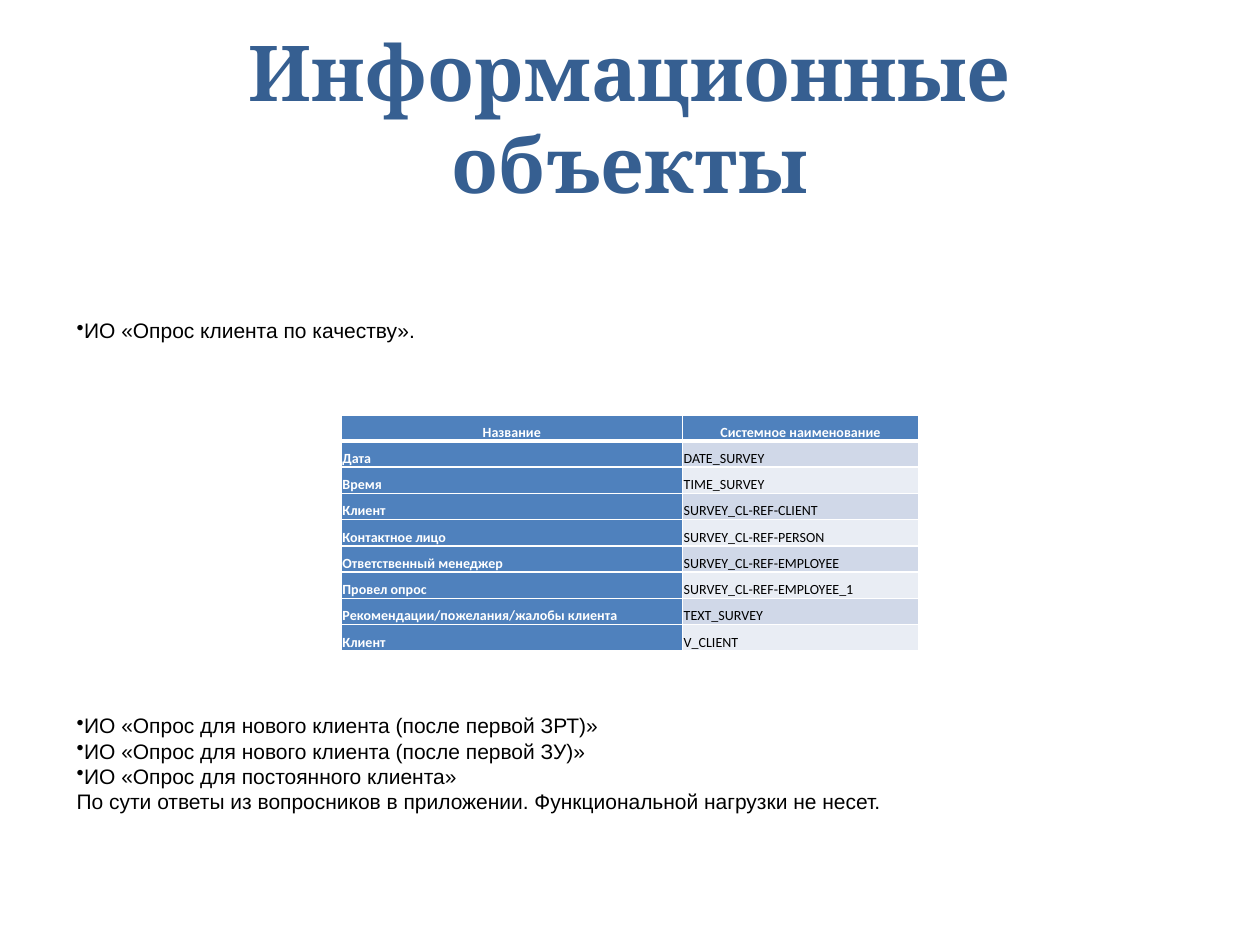
import pptx
import pptx.dml.color
import pptx.enum.text
import pptx.oxml
import pptx.oxml.ns
import pptx.util
from lxml import etree

Pt = pptx.util.Pt
ALIGN = pptx.enum.text.PP_ALIGN
ANCHOR = pptx.enum.text.MSO_ANCHOR

TITLE = "Информационные объекты"
# text, has bullet, space before
NOTES = [
    ("ИО «Опрос клиента по качеству».", True, 0),
    ("ИО «Опрос для нового клиента (после первой ЗРТ)»", True, 211.5),
    ("ИО «Опрос для нового клиента (после первой ЗУ)»", True, 0),
    ("ИО «Опрос для постоянного клиента»", True, 0),
    ("По сути ответы из вопросников в приложении. Функциональной нагрузки не несет.", False, 0),
]
FIELDS = [
    ("Название", "Системное наименование"),
    ("Дата", "DATE_SURVEY"),
    ("Время", "TIME_SURVEY"),
    ("Клиент", "SURVEY_CL-REF-CLIENT"),
    ("Контактное лицо", "SURVEY_CL-REF-PERSON"),
    ("Ответственный менеджер", "SURVEY_CL-REF-EMPLOYEE"),
    ("Провел опрос", "SURVEY_CL-REF-EMPLOYEE_1"),
    ("Рекомендации/пожелания/жалобы клиента", "TEXT_SURVEY"),
    ("Клиент", "V_CLIENT"),
]
COLUMN_WIDTHS = [195, 135]
ROW_HEIGHT = 15
WHITE, BLACK, BLUE, TITLE_BLUE = "FFFFFF", "000000", "4F81BD", "365F91"
BANDS = ["E9EDF4", "D0D8E8"]


def color(value):
    return pptx.dml.color.RGBColor.from_string(value)


def format_runs(paragraph, name, size, value, bold=False):
    for run in paragraph.runs:
        run.font.name = name
        run.font.size = Pt(size)
        run.font.bold = bold
        run.font.color.rgb = color(value)


def add_text_frame(slide, left, top, width, height):
    text_frame = slide.shapes.add_textbox(Pt(left), Pt(top), Pt(width), Pt(height)).text_frame
    text_frame.word_wrap = True
    text_frame.vertical_anchor = ANCHOR.MIDDLE
    return text_frame


def set_borders(cell, bottom_width):
    """Give the cell white edges, 1 pt wide except at the bottom."""
    properties = cell._tc.get_or_add_tcPr()
    widths = {"lnL": 1, "lnR": 1, "lnT": 1, "lnB": bottom_width}
    for index, (tag, width) in enumerate(widths.items()):
        line = pptx.oxml.parse_xml(
            f'<a:{tag} {pptx.oxml.ns.nsdecls("a")} w="{Pt(width)}"><a:solidFill>'
            f'<a:srgbClr val="{WHITE}"/></a:solidFill></a:{tag}>')
        properties.insert(index, line)


def add_field_table(slide):
    table = slide.shapes.add_table(
        len(FIELDS), len(COLUMN_WIDTHS), Pt(195), Pt(237),
        Pt(sum(COLUMN_WIDTHS)), Pt(ROW_HEIGHT * len(FIELDS))).table
    for column, width in zip(table.columns, COLUMN_WIDTHS):
        column.width = Pt(width)
    for row_index, values in enumerate(FIELDS):
        table.rows[row_index].height = Pt(ROW_HEIGHT)
        for column_index, value in enumerate(values):
            is_header = row_index == 0
            is_strong = is_header or column_index == 0
            cell = table.cell(row_index, column_index)
            cell.margin_left = cell.margin_right = cell.margin_top = Pt(0.7)
            cell.margin_bottom = 0
            cell.vertical_anchor = ANCHOR.BOTTOM
            cell.fill.solid()
            cell.fill.fore_color.rgb = color(BLUE if is_strong else BANDS[row_index % 2])
            set_borders(cell, 3 if is_header else 1)
            cell.text_frame.text = value
            paragraph = cell.text_frame.paragraphs[0]
            paragraph.alignment = ALIGN.CENTER if is_header else ALIGN.LEFT
            format_runs(paragraph, "Calibri", 8, WHITE if is_strong else BLACK, is_strong)


def add_notes(slide):
    text_frame = add_text_frame(slide, 36.7, 156.2, 637.2, 310.3)
    text_frame.margin_top = Pt(23.8)
    text_frame.margin_bottom = 0
    text_frame.text = "\n".join(text for text, _, _ in NOTES)
    for paragraph, (_, has_bullet, space_before) in zip(text_frame.paragraphs, NOTES):
        paragraph.space_before = Pt(space_before)
        format_runs(paragraph, "Arial", 12, BLACK)
        if has_bullet:
            properties = paragraph._p.get_or_add_pPr()
            etree.SubElement(properties, pptx.oxml.ns.qn("a:buChar")).set("char", "•")


def main():
    presentation = pptx.Presentation()
    presentation.slide_width, presentation.slide_height = Pt(720), Pt(540)
    slide = presentation.slides.add_slide(presentation.slide_layouts[6])

    title_frame = add_text_frame(slide, 36, 21.6, 648, 90)
    title_frame.text = TITLE
    title_frame.paragraphs[0].alignment = ALIGN.CENTER
    format_runs(title_frame.paragraphs[0], "Cambria", 44, TITLE_BLUE, True)

    add_field_table(slide)
    add_notes(slide)
    presentation.save("out.pptx")


if __name__ == "__main__":
    main()
